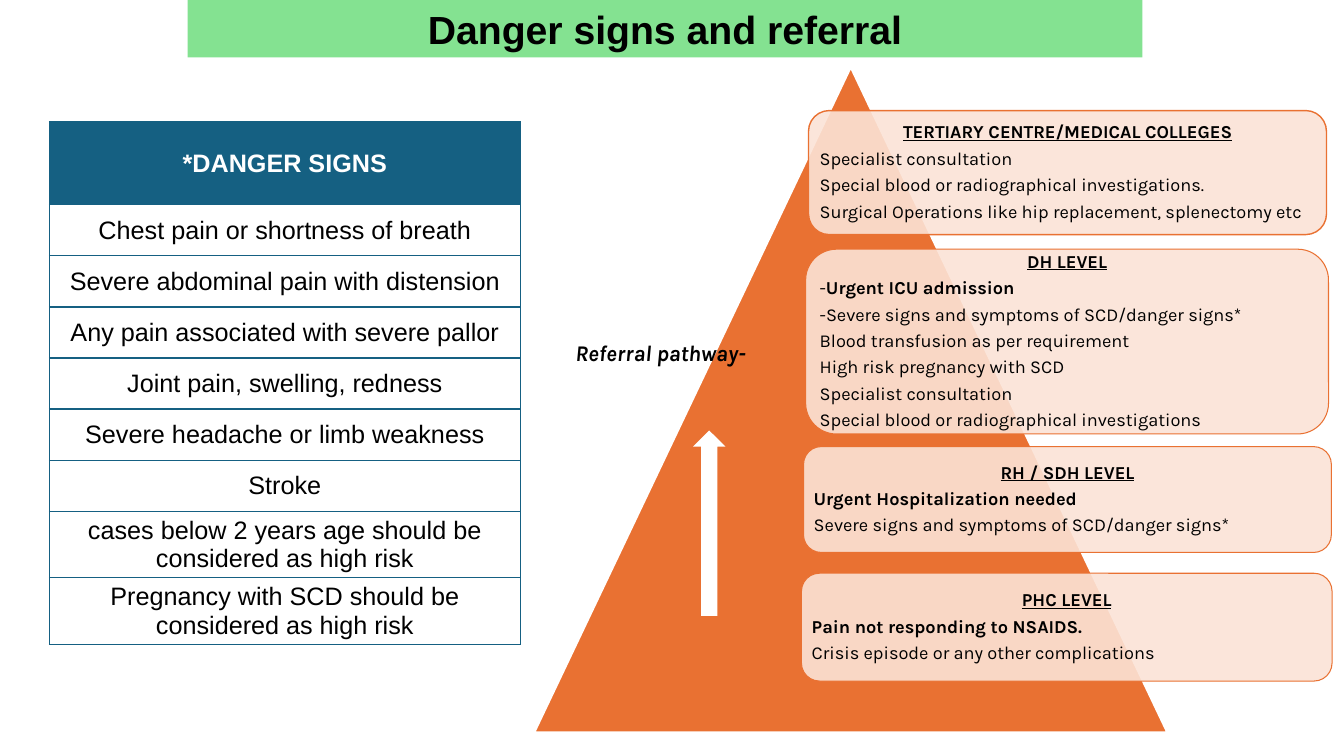
import pptx
import pptx.util
import pptx.dml.color
import pptx.enum.shapes
import pptx.enum.text
import pptx.oxml
import pptx.oxml.ns

Pt = pptx.util.Pt
SHAPE = pptx.enum.shapes.MSO_SHAPE
ALIGN = pptx.enum.text.PP_ALIGN
ANCHOR = pptx.enum.text.MSO_ANCHOR
NS = pptx.oxml.ns.nsdecls("a")

COLORS = {
    "black": "000000",
    "white": "FFFFFF",
    "green": "84E291",
    "blue": "156082",
    "orange": "E97132",
    "peach": "FBE3D6",
}

DANGER_SIGNS = [
    "*DANGER SIGNS",
    "Chest pain or shortness of breath",
    "Severe abdominal pain with distension",
    "Any pain associated with severe pallor",
    "Joint pain, swelling, redness",
    "Severe headache or limb weakness",
    "Stroke",
    "cases below 2 years age should be considered as high risk",
    "Pregnancy with SCD should be considered as high risk",
]
ROW_HEIGHTS = [59.3] + [36.5] * 6 + [47.6] * 2

# Each level: box, line width, heading, then lines as (text, bold) runs
LEVELS = [
    ((577.5, 79, 370, 88.6), 1, "TERTIARY CENTRE/MEDICAL COLLEGES", [
        [("Specialist consultation", False)],
        [("Special blood or radiographical investigations.", False)],
        [("Surgical Operations like hip replacement, splenectomy etc", False)],
    ]),
    ((575.5, 178, 373.5, 132), 0.75, "DH LEVEL", [
        [("-", False), ("Urgent ICU admission", True)],
        [("-Severe signs and symptoms of SCD/danger signs*", False)],
        [("Blood transfusion as per requirement", False)],
        [("High risk pregnancy with SCD", False)],
        [("Specialist consultation", False)],
        [("Special blood or radiographical investigations", False)],
    ]),
    ((574, 319, 377, 75.6), 0.75, "RH / SDH LEVEL", [
        [("Urgent Hospitalization needed", True)],
        [("Severe signs and symptoms of SCD/danger signs*", False)],
    ]),
    ((572.5, 409.5, 379, 77), 0.75, "PHC LEVEL", [
        [("Pain not responding to NSAIDS.", True)],
        [("Crisis episode or any other complications", False)],
    ]),
]


def rgb(name):
    return pptx.dml.color.RGBColor.from_string(COLORS[name])


def paint(sp, fill, line=None, width=1):
    sp.shadow.inherit = False
    sp.fill.solid()
    sp.fill.fore_color.rgb = rgb(fill)
    if line:
        sp.line.color.rgb = rgb(line)
        sp.line.width = Pt(width)
    else:
        sp.line.fill.background()


def style(r, size, font, color="black", bold=False):
    r.font.size = Pt(size)
    r.font.name = font
    r.font.bold = bold
    r.font.color.rgb = rgb(color)


def set_insets(tf, inset):
    tf.margin_left = tf.margin_right = Pt(inset)
    tf.margin_top = tf.margin_bottom = Pt(inset)


def add_title(slide, box):
    sp = slide.shapes.title
    sp.left, sp.top, sp.width, sp.height = map(Pt, box)
    sp.fill.solid()
    sp.fill.fore_color.rgb = rgb("green")
    tf = sp.text_frame
    tf.text = "Danger signs and referral"
    tf.auto_size = pptx.enum.text.MSO_AUTO_SIZE.NONE
    tf.vertical_anchor = ANCHOR.MIDDLE
    p = tf.paragraphs[0]
    p.alignment = ALIGN.CENTER
    style(p.runs[0], 28, "Arial", bold=True)


def add_borders(cell):
    tc_pr = cell._tc.get_or_add_tcPr()
    for i, side in enumerate(("lnL", "lnR", "lnT", "lnB")):
        tc_pr.insert(i, pptx.oxml.parse_xml(
            f'<a:{side} {NS} w="12700"><a:solidFill>'
            f'<a:srgbClr val="{COLORS["blue"]}"/></a:solidFill></a:{side}>'))


def add_danger_table(slide, box):
    frame = slide.shapes.add_table(len(DANGER_SIGNS), 1, *map(Pt, box))
    table = frame.table
    for i, (text, height) in enumerate(zip(DANGER_SIGNS, ROW_HEIGHTS)):
        head = i == 0
        table.rows[i].height = Pt(height)
        cell = table.cell(i, 0)
        cell.text_frame.text = text
        cell.vertical_anchor = ANCHOR.MIDDLE
        cell.margin_top = cell.margin_bottom = Pt(3)
        cell.fill.solid()
        cell.fill.fore_color.rgb = rgb("blue" if head else "white")
        add_borders(cell)
        p = cell.text_frame.paragraphs[0]
        p.alignment = ALIGN.CENTER
        style(p.runs[0], 18, "Arial", "white" if head else "black", head)


def add_level(slide, box, width, heading, lines):
    sp = slide.shapes.add_shape(SHAPE.ROUNDED_RECTANGLE, *map(Pt, box))
    paint(sp, "peach", "orange", width)
    # Let the pyramid show faintly through the box
    color = sp.fill._xPr.find(".//" + pptx.oxml.ns.qn("a:srgbClr"))
    color.append(pptx.oxml.parse_xml(f'<a:alpha {NS} val="90000"/>'))
    tf = sp.text_frame
    tf.word_wrap = True
    tf.vertical_anchor = ANCHOR.MIDDLE
    set_insets(tf, 3.6)
    for i, runs in enumerate([[(heading, True)]] + lines):
        p = tf.paragraphs[0] if i == 0 else tf.add_paragraph()
        p.alignment = ALIGN.LEFT if i else ALIGN.CENTER
        p.line_spacing = 0.9
        p.space_after = Pt(4.8)
        for text, bold in runs:
            r = p.add_run()
            r.text = text
            style(r, 13, "Karla", bold=bold)
            r.font.underline = i == 0


def add_pyramid(slide, box):
    left, top, width, height = box
    sp = slide.shapes.add_shape(SHAPE.ISOSCELES_TRIANGLE, *map(Pt, box))
    paint(sp, "orange", "white", 1.5)
    for level in LEVELS:
        add_level(slide, *level)

    # Upward arrow and its label
    arrow = slide.shapes.add_shape(
        SHAPE.UP_ARROW, Pt(left + 113.5), Pt(top + 259.5), Pt(23), Pt(132.5))
    paint(arrow, "white")
    label = slide.shapes.add_textbox(
        Pt(left + 7.5), Pt(top + 194), Pt(169), Pt(46))
    tf = label.text_frame
    tf.word_wrap = True
    set_insets(tf, 0)
    tf.text = "Referral pathway- "
    p = tf.paragraphs[0]
    p.alignment = ALIGN.CENTER
    style(p.runs[0], 16, "Karla", bold=True)
    p.runs[0].font.italic = True


def main():
    prs = pptx.Presentation()
    prs.slide_width, prs.slide_height = Pt(960), Pt(540)
    slide = prs.slides.add_slide(prs.slide_layouts[5])
    add_title(slide, (134, 0, 682, 41))
    add_danger_table(slide, (35.3, 87, 336.3, sum(ROW_HEIGHTS)))
    add_pyramid(slide, (381.6, 48, 452.2, 475.2))
    prs.save("out.pptx")


if __name__ == "__main__":
    main()
